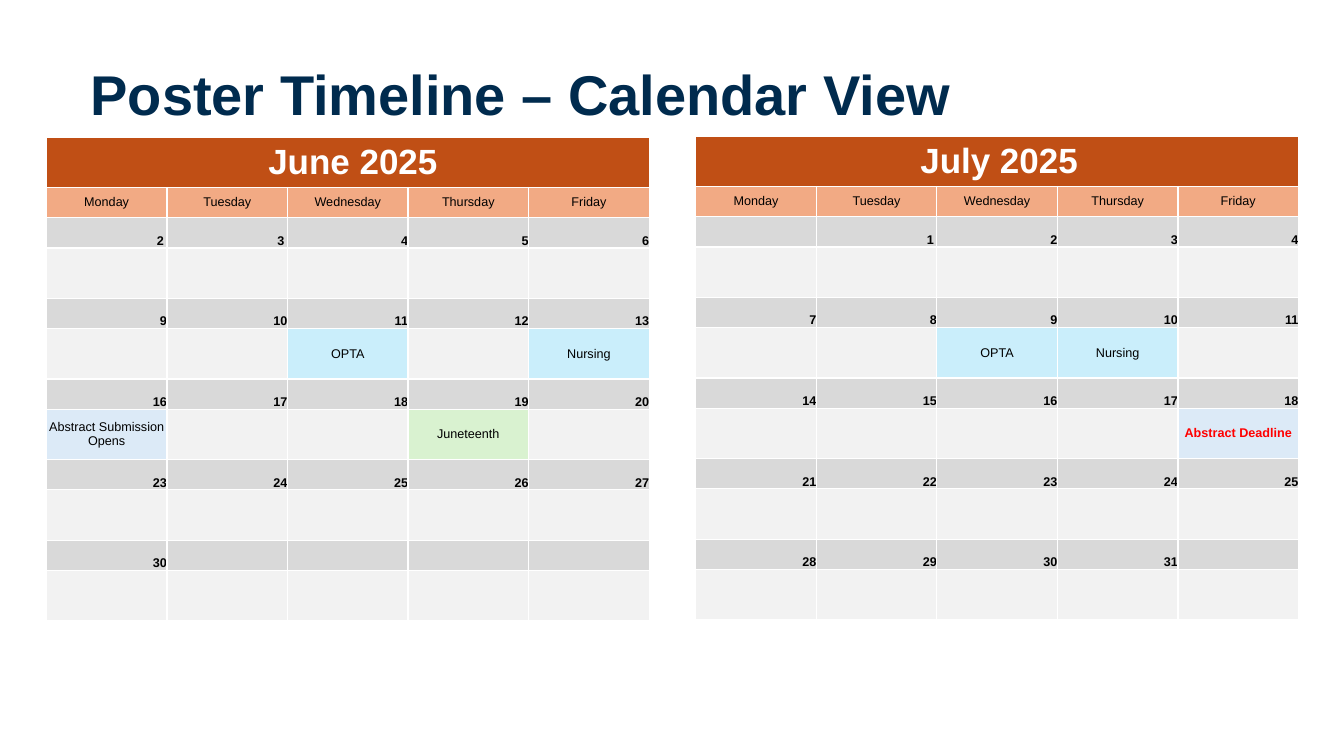
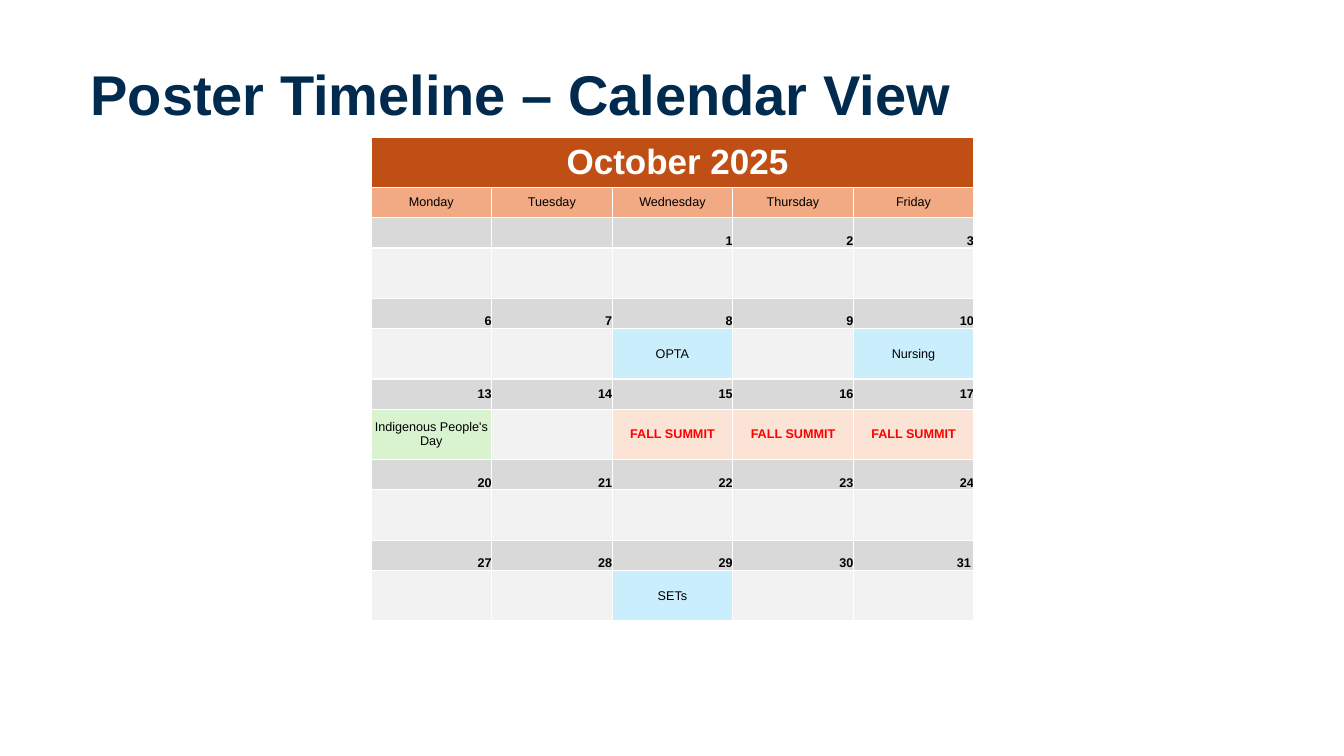
from dataclasses import dataclass, field

from lxml import etree
from pptx import Presentation
from pptx.dml import color
from pptx.enum import text
from pptx.oxml import ns
from pptx.util import Inches, Pt


@dataclass(frozen=True)
class Theme:
    font: str = "Arial"
    title_size: int = 40
    month_size: int = 25
    cell_size: int = 9
    navy: str = "002B4E"
    white: str = "FFFFFF"
    black: str = "000000"
    alert: str = "FF0000"
    month_fill: str = "C04F15"
    weekday_fill: str = "F2AA84"
    date_fill: str = "D9D9D9"
    empty_fill: str = "F2F2F2"
    meeting_fill: str = "CAEEFB"
    abstract_fill: str = "DCEAF7"
    holiday_fill: str = "D9F2D0"
    summit_fill: str = "FBE3D6"


@dataclass(frozen=True)
class Event:
    label: str
    fill: str
    urgent: bool = False


@dataclass(frozen=True)
class Month:
    name: str
    first_monday: int
    last_day: int
    events: dict
    name_indent: float = 0.1
    indented_days: set = field(default_factory=set)
    centred_days: set = field(default_factory=set)


THEME = Theme()
TITLE = "Poster Timeline – Calendar View"
WEEKDAYS = ["Monday", "Tuesday", "Wednesday", "Thursday", "Friday"]
WEEKS = 5
TALL, SHORT = 0.5, 0.3
ROW_HEIGHTS = [TALL, SHORT] + [SHORT, TALL] * WEEKS
CALENDAR_WIDTH = 5.98

OPTA = Event("OPTA", THEME.meeting_fill)
NURSING = Event("Nursing", THEME.meeting_fill)
SUMMIT = Event("FALL SUMMIT", THEME.summit_fill, urgent=True)

JUNE = Month("June 2025", 2, 30, {
    11: OPTA,
    13: NURSING,
    16: Event("Abstract Submission Opens", THEME.abstract_fill),
    19: Event("Juneteenth", THEME.holiday_fill),
}, indented_days={2, 3})
JULY = Month("July 2025", 0, 31, {
    9: OPTA,
    10: NURSING,
    18: Event("Abstract Deadline", THEME.abstract_fill, urgent=True),
}, name_indent=0.04, indented_days={1})
OCTOBER = Month("October 2025", -1, 31, {
    8: OPTA,
    10: NURSING,
    13: Event("Indigenous People's Day", THEME.holiday_fill),
    15: SUMMIT,
    16: SUMMIT,
    17: SUMMIT,
    29: Event("SETs", THEME.meeting_fill),
}, indented_days={31}, centred_days=set(range(13, 18)))


def rgb(value):
    return color.RGBColor.from_string(value)


def write(tf, content, size=THEME.cell_size, fill=THEME.black, bold=False,
          align=text.PP_ALIGN.CENTER, spacing=None):
    p = tf.paragraphs[0]
    p.alignment = align
    p.line_spacing = spacing
    if not content:
        etree.SubElement(p._p, ns.qn("a:endParaRPr"), sz=str(size * 100))
        return
    r = p.add_run()
    r.text = content
    r.font.name = THEME.font
    r.font.size = Pt(size)
    r.font.bold = bold
    r.font.color.rgb = rgb(fill)


def add_title(slide):
    sp = slide.shapes.add_textbox(Inches(0.8), Inches(0.59), Inches(11.73), Inches(0.76))
    tf = sp.text_frame
    tf.word_wrap = True
    tf.vertical_anchor = text.MSO_ANCHOR.MIDDLE
    write(tf, TITLE, size=THEME.title_size, fill=THEME.navy, bold=True,
          align=text.PP_ALIGN.LEFT, spacing=0.9)


def add_borders(cell):
    tc_pr = cell._tc.get_or_add_tcPr()
    for side in ("lnL", "lnR", "lnT", "lnB"):
        line = etree.SubElement(tc_pr, ns.qn(f"a:{side}"), w=str(Pt(1)))
        solid = etree.SubElement(line, ns.qn("a:solidFill"))
        etree.SubElement(solid, ns.qn("a:srgbClr"), val=THEME.white)


def fill_cell(cell, content, background, anchor=text.MSO_ANCHOR.MIDDLE,
              left=0, right=0, **fmt):
    add_borders(cell)
    cell.fill.solid()
    cell.fill.fore_color.rgb = rgb(background)
    cell.margin_left, cell.margin_right = Inches(left), Inches(right)
    cell.margin_top = cell.margin_bottom = 0
    cell.vertical_anchor = anchor
    write(cell.text_frame, content, **fmt)


def fill_day(table, month, week, column):
    day = month.first_monday + 7 * week + column
    row = 2 + 2 * week
    centred = day in month.centred_days
    fill_cell(table.cell(row, column),
              str(day) if 1 <= day <= month.last_day else "", THEME.date_fill,
              anchor=text.MSO_ANCHOR.MIDDLE if centred else text.MSO_ANCHOR.BOTTOM,
              right=0.03 if day in month.indented_days else 0,
              bold=True, align=text.PP_ALIGN.RIGHT)
    event = month.events.get(day, Event("", THEME.empty_fill))
    fill_cell(table.cell(row + 1, column), event.label, event.fill, bold=event.urgent,
              fill=THEME.alert if event.urgent else THEME.black)


def add_calendar(slide, month, left, top):
    table = slide.shapes.add_table(
        len(ROW_HEIGHTS), len(WEEKDAYS), Inches(left), Inches(top),
        Inches(CALENDAR_WIDTH), Inches(sum(ROW_HEIGHTS))).table
    table.first_row = table.horz_banding = False
    for row, height in zip(table.rows, ROW_HEIGHTS):
        row.height = Inches(height)
    table.cell(0, 0).merge(table.cell(0, len(WEEKDAYS) - 1))
    for column, weekday in enumerate(WEEKDAYS):
        table.columns[column].width = Inches(CALENDAR_WIDTH / len(WEEKDAYS))
        fill_cell(table.cell(0, column), "" if column else month.name, THEME.month_fill,
                  left=month.name_indent, size=THEME.month_size,
                  fill=THEME.white, bold=True)
        fill_cell(table.cell(1, column), weekday, THEME.weekday_fill)
        for week in range(WEEKS):
            fill_day(table, month, week, column)


def add_timeline_slide(prs, calendars):
    slide = prs.slides.add_slide(prs.slide_layouts[6])
    add_title(slide)
    for month, left, top in calendars:
        add_calendar(slide, month, left, top)


def main():
    prs = Presentation()
    prs.slide_width, prs.slide_height = Inches(13.33), Inches(7.5)
    add_timeline_slide(prs, [(JULY, 6.9, 1.35), (JUNE, 0.46, 1.36)])
    add_timeline_slide(prs, [(OCTOBER, 3.68, 1.36)])
    prs.save("out.pptx")


if __name__ == "__main__":
    main()
